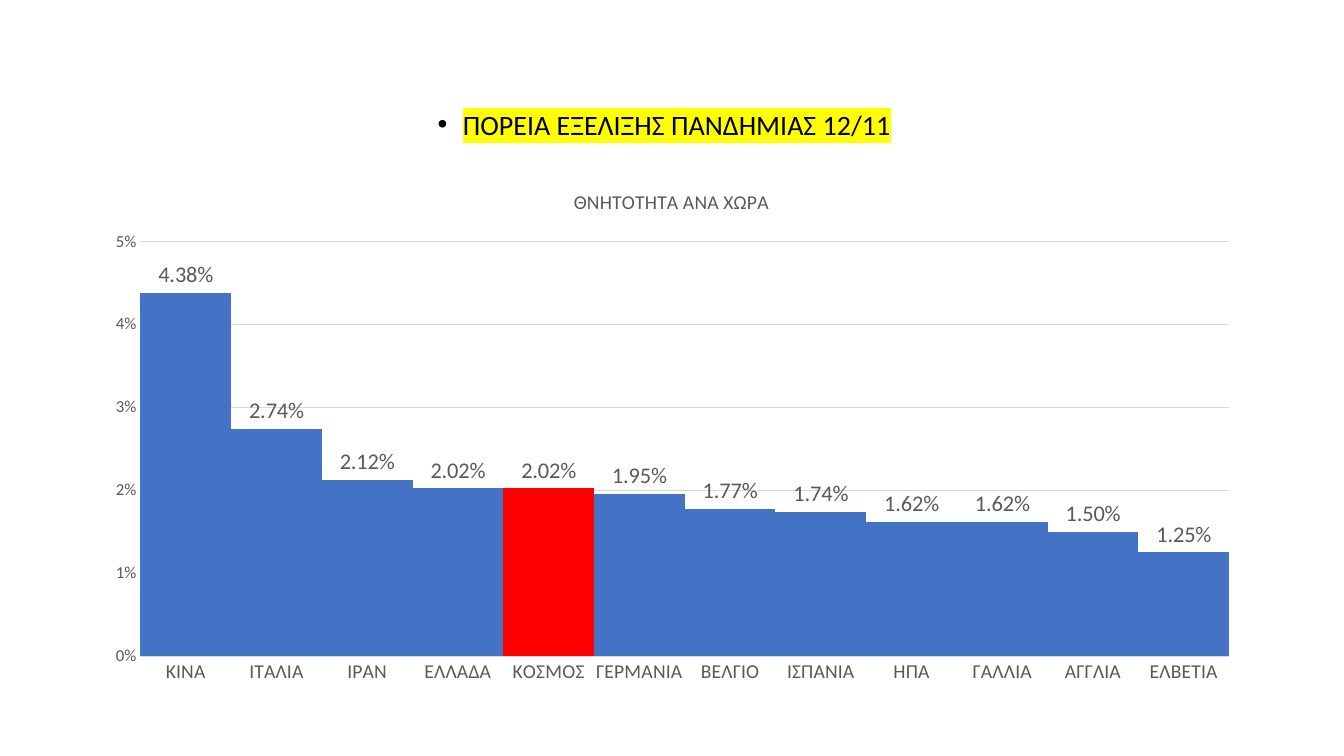
from lxml import etree
from pptx import Presentation
from pptx.chart.data import CategoryChartData
from pptx.dml.color import RGBColor
from pptx.enum.chart import XL_CHART_TYPE, XL_LABEL_POSITION, XL_TICK_MARK
from pptx.enum.text import MSO_ANCHOR, PP_ALIGN
from pptx.oxml.ns import qn
from pptx.util import Emu, Inches, Pt

COLUMNS = XL_CHART_TYPE.COLUMN_CLUSTERED
OUTSIDE = XL_LABEL_POSITION.OUTSIDE_END
NO_TICK = XL_TICK_MARK.NONE
MIDDLE = MSO_ANCHOR.MIDDLE
CENTER = PP_ALIGN.CENTER

HEADING = "ΠΟΡΕΙΑ ΕΞΕΛΙΞΗΣ ΠΑΝΔΗΜΙΑΣ 12/11"
CHART_TITLE = "ΘΝΗΤΟΤΗΤΑ ΑΝΑ ΧΩΡΑ"
MORTALITY = {
    "ΚΙΝΑ": 0.0438, "ΙΤΑΛΙΑ": 0.0274, "ΙΡΑΝ": 0.0212, "ΕΛΛΑΔΑ": 0.0202,
    "ΚΟΣΜΟΣ": 0.0202, "ΓΕΡΜΑΝΙΑ": 0.0195, "ΒΕΛΓΙΟ": 0.0177, "ΙΣΠΑΝΙΑ": 0.0174,
    "ΗΠΑ": 0.0162, "ΓΑΛΛΙΑ": 0.0162, "ΑΓΓΛΙΑ": 0.015, "ΕΛΒΕΤΙΑ": 0.0125,
}
HIGHLIGHTED = "ΚΟΣΜΟΣ"

FONT = "Calibri"
BLACK, GRAY, LIGHT_GRAY = "000000", "595959", "D9D9D9"
BLUE, RED, YELLOW = "4472C4", "FF0000", "FFFF00"

SLIDE_SIZE = (13.33, 7.5)
HEADING_BOX = (1.1, 0.83, 11.13, 0.84)
CHART_BOX = (0.91, 1.68, 11.5, 5.21)
PLOT_SHARES = {"x": 0.042, "y": 0.137, "w": 0.939, "h": 0.79}


def color(hex_string):
    return RGBColor.from_string(hex_string)


def inches(lengths):
    return [Inches(length) for length in lengths]


def set_font(font, size, hex_string):
    font.size = Pt(size)
    font.bold = False
    font.color.rgb = color(hex_string)
    font.name = FONT


def set_line(line, hex_string):
    line.color.rgb = color(hex_string)
    line.width = Pt(0.75)


def add_text(paragraph, text, size=20, hex_string=BLACK, highlight=None):
    run = paragraph.add_run()
    run.text = text
    set_font(run.font, size, hex_string)
    if highlight:
        marker = etree.Element(qn("a:highlight"))
        etree.SubElement(marker, qn("a:srgbClr"), val=highlight)
        run.font._element.find(qn("a:solidFill")).addnext(marker)


def add_bullet(paragraph, character, hanging):
    properties = paragraph._p.get_or_add_pPr()
    properties.set("marL", "0")
    properties.set("indent", str(-Inches(hanging)))
    etree.SubElement(properties, qn("a:buFont"), typeface="Arial")
    etree.SubElement(properties, qn("a:buChar"), char=character)


def add_heading(slide):
    frame = slide.shapes.add_textbox(*inches(HEADING_BOX)).text_frame
    frame.word_wrap = True
    frame.vertical_anchor = MIDDLE
    paragraph = frame.paragraphs[0]
    paragraph.alignment = CENTER
    paragraph.line_spacing = 0.9
    paragraph.space_after = Pt(6)
    add_bullet(paragraph, "•", 0.25)
    add_text(paragraph, HEADING, highlight=YELLOW)


def place_plot(chart):
    """Fix the inner plot area at its shares of the chart frame."""
    plot_area = chart._chartSpace.chart.plotArea
    layout = plot_area.find(qn("c:layout"))
    if layout is None:
        layout = etree.Element(qn("c:layout"))
        plot_area.insert(0, layout)
    manual = etree.SubElement(layout, qn("c:manualLayout"))
    settings = {"layoutTarget": "inner", "xMode": "edge", "yMode": "edge", **PLOT_SHARES}
    for tag, value in settings.items():
        etree.SubElement(manual, qn(f"c:{tag}"), val=str(value))


def format_axes(chart):
    category_axis, value_axis = chart.category_axis, chart.value_axis
    for axis, size in ((category_axis, 14), (value_axis, 12)):
        axis.major_tick_mark = axis.minor_tick_mark = NO_TICK
        set_font(axis.tick_labels.font, size, GRAY)
    set_line(category_axis.format.line, LIGHT_GRAY)
    value_axis.format.line.fill.background()
    value_axis.minimum_scale, value_axis.maximum_scale = 0, 0.05
    value_axis.major_unit = 0.01
    value_axis.tick_labels.number_format = "0%"
    value_axis.tick_labels.number_format_is_linked = False
    set_line(value_axis.major_gridlines.format.line, LIGHT_GRAY)


def format_columns(plot):
    plot.gap_width = 0
    plot.vary_by_categories = False
    series = plot.series[0]
    world = series.points[list(MORTALITY).index(HIGHLIGHTED)]
    for part, hex_string in ((series, BLUE), (world, RED)):
        part.format.fill.solid()
        part.format.fill.fore_color.rgb = color(hex_string)
    labels = series.data_labels
    labels.show_value = True
    labels.number_format = "0.00%"
    labels.number_format_is_linked = False
    labels.position = OUTSIDE
    set_font(labels.font, 16, GRAY)


def add_mortality_chart(slide):
    data = CategoryChartData(number_format="0.00%")
    data.categories = list(MORTALITY)
    data.add_series("Series 1", list(MORTALITY.values()))
    chart = slide.shapes.add_chart(COLUMNS, *inches(CHART_BOX), data).chart
    set_font(chart.font, 10, BLACK)
    chart.has_legend = False
    chart.has_title = True
    title = chart.chart_title
    title.include_in_layout = False
    add_text(title.text_frame.paragraphs[0], CHART_TITLE, size=14, hex_string=GRAY)
    format_axes(chart)
    format_columns(chart.plots[0])
    place_plot(chart)


def main():
    presentation = Presentation()
    presentation.slide_width, presentation.slide_height = map(Emu, inches(SLIDE_SIZE))
    slide = presentation.slides.add_slide(presentation.slide_layouts[6])
    add_heading(slide)
    add_mortality_chart(slide)
    presentation.save("out.pptx")


if __name__ == "__main__":
    main()
